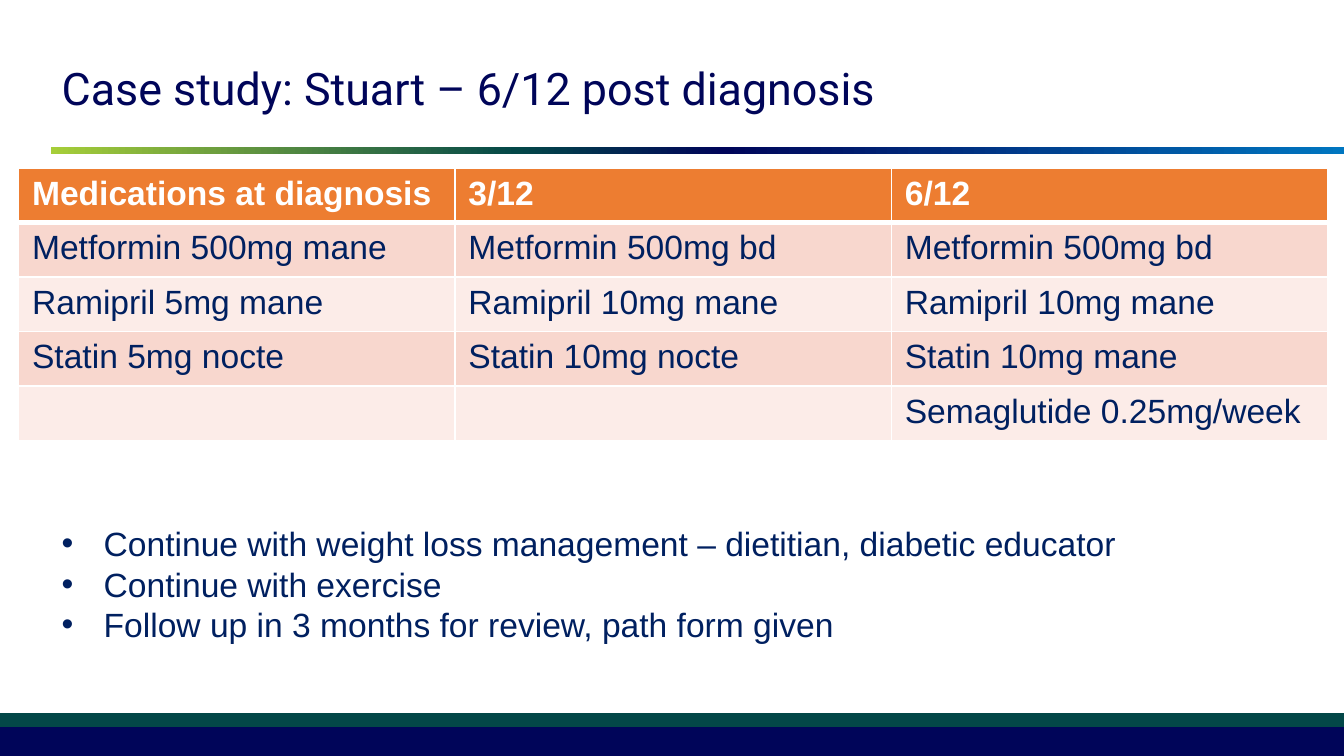
from lxml import etree
from pptx import Presentation
from pptx.dml.color import RGBColor
from pptx.enum.shapes import MSO_SHAPE
from pptx.enum.text import MSO_ANCHOR
from pptx.oxml.ns import qn
from pptx.util import Pt

RECT = MSO_SHAPE.RECTANGLE
MIDDLE = MSO_ANCHOR.MIDDLE

COLORS = {
    "navy": "000559", "green": "034748", "lime": "A6CE39", "blue": "0076C0",
    "text": "002060", "white": "FFFFFF", "header": "ED7D31",
    "band_dark": "F8D7CE", "band_light": "FCECE8",
}
TITLE = {"name": "Roboto", "size": Pt(24), "color": "navy"}
BODY = {"name": "Arial", "size": Pt(18), "color": "text"}
HEADER = {**BODY, "color": "white", "bold": True}

RULE_STOPS = [(0, "lime"), (36, "green"), (52, "navy"), (100, "blue")]
MEDICATIONS = [
    ["Medications at diagnosis", "3/12", "6/12"],
    ["Metformin 500mg mane", "Metformin 500mg bd", "Metformin 500mg bd"],
    ["Ramipril 5mg mane", "Ramipril 10mg mane", "Ramipril 10mg mane"],
    ["Statin 5mg nocte", "Statin 10mg nocte", "Statin 10mg mane"],
    ["", "", "Semaglutide 0.25mg/week"],
]
PLAN = [
    "Continue with weight loss management – dietitian, diabetic educator",
    "Continue with exercise",
    "Follow up in 3 months for review, path form given",
]


def rgb(name):
    return RGBColor.from_string(COLORS[name])


def add_run(p, text, fmt):
    r = p.add_run()
    r.text = text
    for key, value in fmt.items():
        if key == "color":
            r.font.color.rgb = rgb(value)
        else:
            setattr(r.font, key, value)


def add_bar(s, top, height, color, left=0):
    sp = s.shapes.add_shape(RECT, Pt(left), Pt(top), Pt(720 - left), Pt(height))
    sp.shadow.inherit = False
    sp.line.fill.background()
    sp.fill.solid()
    sp.fill.fore_color.rgb = rgb(color)
    return sp


def set_gradient(sp, stops):
    """Swap the solid fill for a left-to-right gradient."""
    solid = sp.fill._xPr.find(qn("a:solidFill"))
    grad = etree.Element(qn("a:gradFill"), rotWithShape="1")
    gs_list = etree.SubElement(grad, qn("a:gsLst"))
    for percent, color in stops:
        gs = etree.SubElement(gs_list, qn("a:gs"), pos=str(percent * 1000))
        etree.SubElement(gs, qn("a:srgbClr"), val=COLORS[color])
    etree.SubElement(grad, qn("a:lin"), ang="0", scaled="0")
    solid.getparent().replace(solid, grad)


def add_text_box(s, left, top, width, height):
    tf = s.shapes.add_textbox(Pt(left), Pt(top), Pt(width), Pt(height)).text_frame
    tf.word_wrap = True
    return tf


def add_bullets(tf, items):
    for i, text in enumerate(items):
        p = tf.paragraphs[0] if i == 0 else tf.add_paragraph()
        p.line_spacing = Pt(21.75)
        pPr = p._p.get_or_add_pPr()
        pPr.set("marL", str(Pt(22.5)))
        pPr.set("indent", str(-Pt(22.5)))
        etree.SubElement(pPr, qn("a:buFont"), typeface="Arial")
        etree.SubElement(pPr, qn("a:buChar"), char="•")
        add_run(p, text, BODY)


def set_borders(cell, widths):
    tcPr = cell._tc.get_or_add_tcPr()
    for side, width in widths.items():
        ln = etree.SubElement(tcPr, qn("a:ln" + side), w=str(Pt(width)))
        fill = etree.SubElement(ln, qn("a:solidFill"))
        etree.SubElement(fill, qn("a:srgbClr"), val=COLORS["white"])


def add_medication_table(s, rows, left, top, col_width, row_height):
    n_rows, n_cols = len(rows), len(rows[0])
    table = s.shapes.add_table(n_rows, n_cols, Pt(left), Pt(top),
                               Pt(col_width * n_cols), Pt(row_height * n_rows)).table
    for col in table.columns:
        col.width = Pt(col_width)
    for i, texts in enumerate(rows):
        table.rows[i].height = Pt(row_height)
        band = "header" if i == 0 else "band_dark" if i % 2 else "band_light"
        for j, text in enumerate(texts):
            cell = table.cell(i, j)
            # Thicker line between the header and the body
            set_borders(cell, {"L": 1, "R": 1, "T": 3 if i == 1 else 1,
                               "B": 3 if i == 0 else 1})
            cell.fill.solid()
            cell.fill.fore_color.rgb = rgb(band)
            if text:
                add_run(cell.text_frame.paragraphs[0], text, BODY if i else HEADER)


def main():
    prs = Presentation()
    prs.slide_width, prs.slide_height = Pt(720), Pt(405)
    s = prs.slides.add_slide(prs.slide_layouts[6])

    # Footer bands and title rule
    add_bar(s, 382, 7.5, "green")
    add_bar(s, 389.5, 18, "navy")
    set_gradient(add_bar(s, 78.9, 3.6, "lime", left=27.4), RULE_STOPS)

    # Title
    tf = add_text_box(s, 26, 21.8, 691, 50)
    tf.vertical_anchor = MIDDLE
    add_run(tf.paragraphs[0], "Case study: Stuart – 6/12 post diagnosis", TITLE)

    # Medications over time
    add_medication_table(s, MEDICATIONS, left=10, top=90, col_width=233.8, row_height=29.2)

    # Follow-up plan
    add_bullets(add_text_box(s, 26, 276.5, 668, 72.7), PLAN)

    prs.save("out.pptx")


if __name__ == "__main__":
    main()
